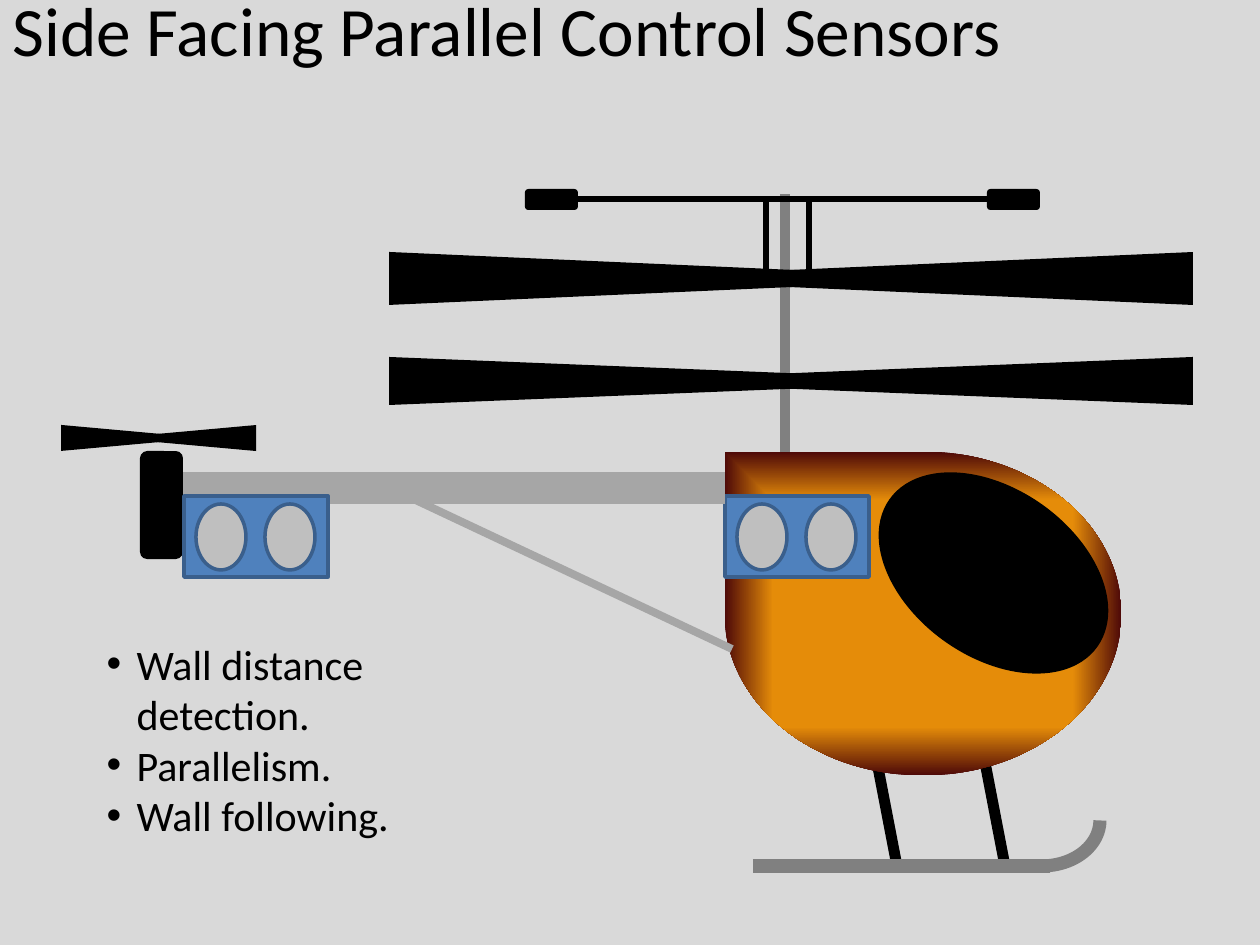
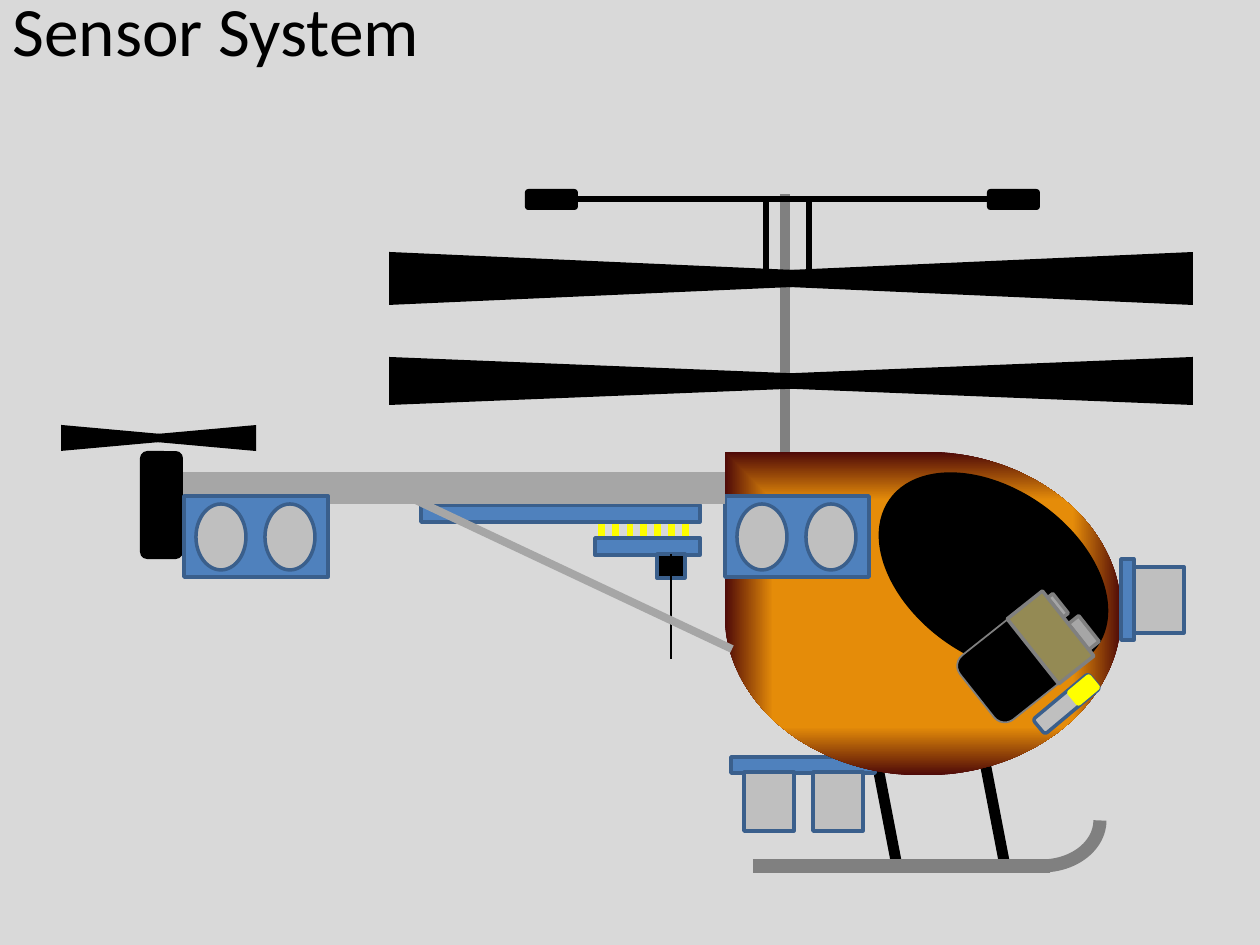
from pptx import Presentation
from pptx.dml.color import RGBColor
from pptx.enum.shapes import MSO_CONNECTOR, MSO_SHAPE
from pptx.enum.text import MSO_ANCHOR, MSO_AUTO_SIZE, PP_ALIGN
from pptx.oxml import parse_xml
from pptx.oxml.ns import nsdecls
from pptx.util import Pt

SCALE = 914400 / 126
BLACK, GREY, SILVER, STEEL = "000000", "808080", "BFBFBF", "A6A6A6"
BLUE, EDGE, YELLOW, OLIVE = "4F81BD", "3A5F8C", "FFFF00", "948A54"
ORANGE, MAROON, PAPER = "E58C09", "4D0808", "D9D9D9"
RECT, ROUND, OVAL = MSO_SHAPE.RECTANGLE, MSO_SHAPE.ROUNDED_RECTANGLE, MSO_SHAPE.OVAL
STEP = 69

FRAME = {"word_wrap": True, "auto_size": MSO_AUTO_SIZE.NONE,
         "vertical_anchor": MSO_ANCHOR.TOP}
PARA = {"alignment": PP_ALIGN.LEFT, "space_before": Pt(0), "space_after": Pt(0)}


def px(num):
    return round(num * SCALE)


def ink(color, code):
    color.rgb = RGBColor.from_string(code)


def apply(item, values):
    for name, value in values.items():
        setattr(item, name, value)


class Pad:
    def __init__(self, slide, x=0, y=0):
        self.slide, self.x, self.y = slide, x, y

    def sub(self, x, y):
        return Pad(self.slide, self.x + x, self.y + y)

    def shape(self, kind, box, fill=None, edge=None, width=2, turn=0):
        x, y, w, h = box
        item = self.slide.shapes.add_shape(
            kind, px(self.x + x), px(self.y + y), px(w), px(h))
        item.shadow.inherit = False
        item.rotation = turn
        if fill:
            item.fill.solid()
            ink(item.fill.fore_color, fill)
        else:
            item.fill.background()
        if edge:
            ink(item.line.color, edge)
            item.line.width = Pt(width)
        else:
            item.line.fill.background()
        return item

    def line(self, start, end, code, width):
        ends = [px(n) for a, b in (start, end) for n in (self.x + a, self.y + b)]
        item = self.slide.shapes.add_connector(MSO_CONNECTOR.STRAIGHT, *ends)
        ink(item.line.color, code)
        item.line.width = Pt(width)
        item._element.spPr.append(parse_xml(f"<a:effectLst {nsdecls('a')}/>"))
        return item


def write(holder, box, lines, size, spacing=1.0):
    names = ("left", "top", "width", "height")
    apply(holder, dict(zip(names, map(px, box))))
    frame = holder.text_frame
    frame.text = "\n".join(lines)
    apply(frame, FRAME)
    for para in frame.paragraphs:
        apply(para, {**PARA, "line_spacing": spacing})
        for run in para.runs:
            apply(run.font, {"size": Pt(size), "name": "Calibri"})
            ink(run.font.color, BLACK)
    return frame


def title(slide, text):
    frame = write(slide.shapes.title, (0, 0, 1071, 136), [text], 39.6, 0.85)
    frame.margin_top = 0


def points(slide, lines):
    frame = write(slide.placeholders[1], (94, 632, 440, 205), lines, 24)
    for para in frame.paragraphs:
        props = para._p.get_or_add_pPr()
        props.set("marL", str(px(30)))
        props.set("indent", str(-px(30)))
        props.append(parse_xml(f'<a:buFont {nsdecls("a")} typeface="Arial"/>'))
        props.append(parse_xml(f'<a:buChar {nsdecls("a")} char="•"/>'))


def sensor(pad):
    pad.shape(RECT, (0, 0, 144, 81), BLUE, EDGE)
    for i in range(2):
        pad.shape(OVAL, (12 + i * STEP, 8, 50, 66), SILVER, EDGE)


def rotor(pad, wide, high):
    blade = round(wide * 0.74)
    top = (high - blade) / 2
    for mid, turn in ((blade / 2, 90), (wide - blade / 2, 270)):
        pad.shape(MSO_SHAPE.ISOSCELES_TRIANGLE,
                  (mid - high / 2, top, high, blade), BLACK, turn=turn)


def stand(pad):
    pad.line((32, 284), (32, 0), GREY, 5.75)
    for x in (123, 231):
        pad.line((x, 563), (x + 21, 672), BLACK, 6.25)


def hull(pad):
    body = pad.shape(MSO_SHAPE.TEAR, (36, -36, 324, 397), ORANGE, turn=270)
    props = body._element.spPr
    props.replace(props[2], parse_xml(
        f'<a:gradFill {nsdecls("a")}><a:gsLst>'
        f'<a:gs pos="70000"><a:srgbClr val="{ORANGE}"/></a:gs>'
        f'<a:gs pos="100000"><a:srgbClr val="{MAROON}"/></a:gs></a:gsLst>'
        '<a:path path="shape"><a:fillToRect l="50000" t="50000" r="50000" '
        'b="50000"/></a:path></a:gradFill>'))
    sensor(pad.sub(0, 45))


def tail(pad):
    pad.line((664, 63), (115, 63), STEEL, 18.25)
    pad.line((346, 71), (671, 224), STEEL, 4.5)
    rotor(pad, 195, 26)
    pad.shape(ROUND, (79, 26, 43, 108), BLACK)
    sensor(pad.sub(123, 71))


def skid(pad):
    pad.line((0, 91), (297, 91), GREY, 7.5)
    arc = pad.shape(MSO_SHAPE.ARC, (231, 0, 116, 91), edge=GREY, width=7.5)
    arc.adjustments[0] = 0
    arc.adjustments[1] = 54


def head(pad):
    rotor(pad.sub(0, 63), 804, 53)
    rotor(pad.sub(0, 168), 804, 48)
    pad.line((168, 10), (604, 10), BLACK, 3.75)
    for x in (136, 598):
        pad.shape(ROUND, (x, 0, 53, 21), BLACK)
    for x in (377, 420):
        pad.line((x, 10), (x, 84), BLACK, 3.5)


def radio(pad):
    for i in range(7):
        pad.line((181 + 14 * i, 17), (181 + 14 * i, 33), YELLOW, 4)
    pad.shape(RECT, (0, 0, 279, 17), BLUE, EDGE)
    pad.shape(RECT, (174, 33, 105, 17), BLUE, EDGE)
    box = pad.shape(RECT, (236, 49, 28, 24), BLACK, EDGE)
    wire = pad.line((250, 49), (250, 154), BLACK, 1.5)
    wire.begin_connect(box, 0)


def belly(pad):
    pad.shape(RECT, (0, 0, 144, 16), BLUE, EDGE)
    for i in range(2):
        pad.shape(RECT, (13 + i * STEP, 15, 50, 59), SILVER, EDGE)


def nose(pad):
    pad.shape(RECT, (0, 0, 13, 81), BLUE, EDGE)
    pad.shape(RECT, (13, 8, 50, 66), SILVER, EDGE)


def torch(pad):
    pad.shape(ROUND, (0, 0, 19, 72), SILVER, EDGE, turn=50.1)
    pad.shape(ROUND, (17, 7, 19, 30), YELLOW, turn=50.1)


def camera(pad):
    for kind, box, fill, edge in (
            (RECT, (61, 0, 25, 13), STEEL, 2),
            (RECT, (83, 24, 33, 19), STEEL, 2),
            (ROUND, (0, 0, 82, 117), BLACK, 1),
            (RECT, (27, 14, 83, 45), OLIVE, 2)):
        pad.shape(kind, box, fill, GREY, edge, 51.6)


def craft(pad, full=False):
    stand(pad.sub(692, 5))
    if full:
        radio(pad.sub(360, 316))
        belly(pad.sub(670, 568))
    hull(pad.sub(664, 262))
    tail(pad.sub(0, 236))
    skid(pad.sub(692, 586))
    if full:
        nose(pad.sub(1060, 370))
        torch(pad.sub(996, 479))
    head(pad.sub(328, 0))
    pad.shape(OVAL, (805, 300, 255, 168), BLACK, turn=35.3)
    if full:
        camera(pad.sub(921, 412))


def main():
    deck = Presentation()
    deck.slide_width, deck.slide_height = px(1260), px(945)
    paper = deck.slide_master.background.fill
    paper.solid()
    ink(paper.fore_color, PAPER)

    side = deck.slides.add_slide(deck.slide_layouts[1])
    title(side, "Side Facing Parallel Control Sensors")
    points(side, ["Wall distance detection.", "Parallelism.", "Wall following."])
    craft(Pad(side, 61, 189))

    system = deck.slides.add_slide(deck.slide_layouts[5])
    title(system, "Sensor System")
    craft(Pad(system, 61, 189), full=True)

    deck.save("out.pptx")


if __name__ == "__main__":
    main()
